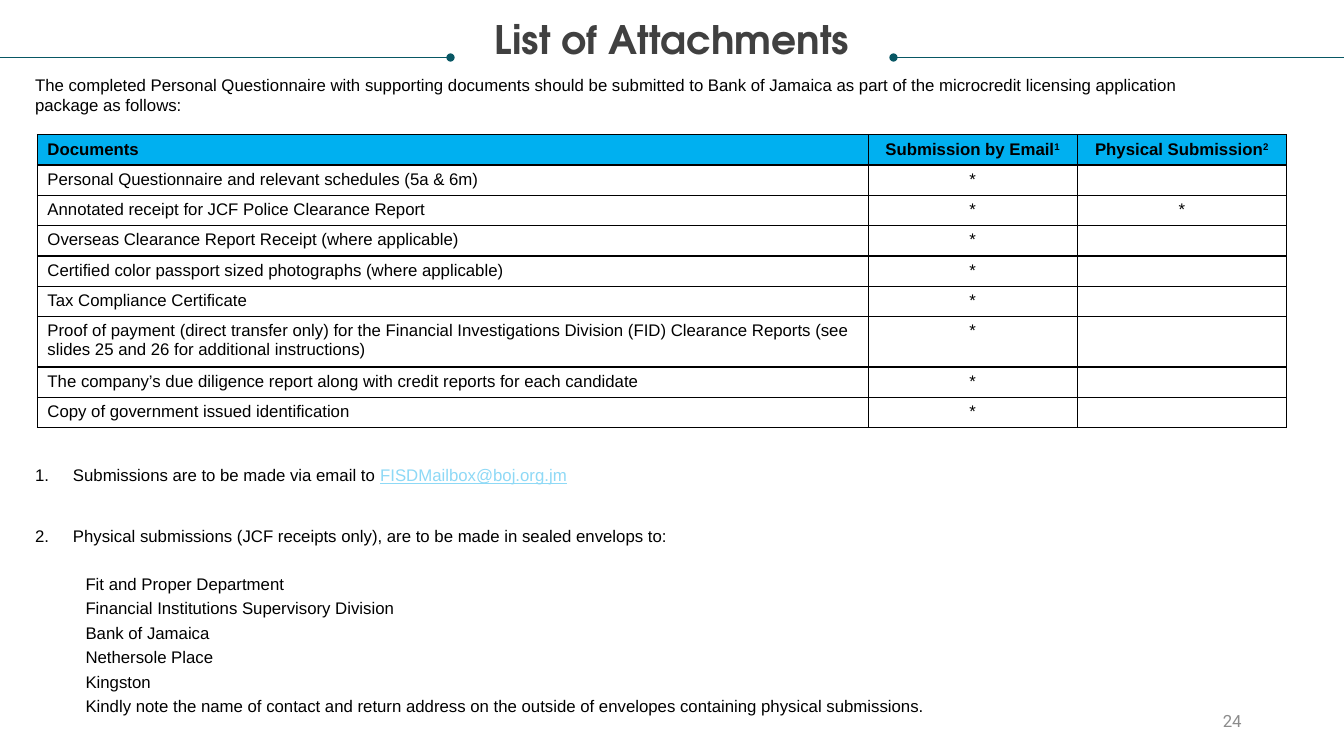
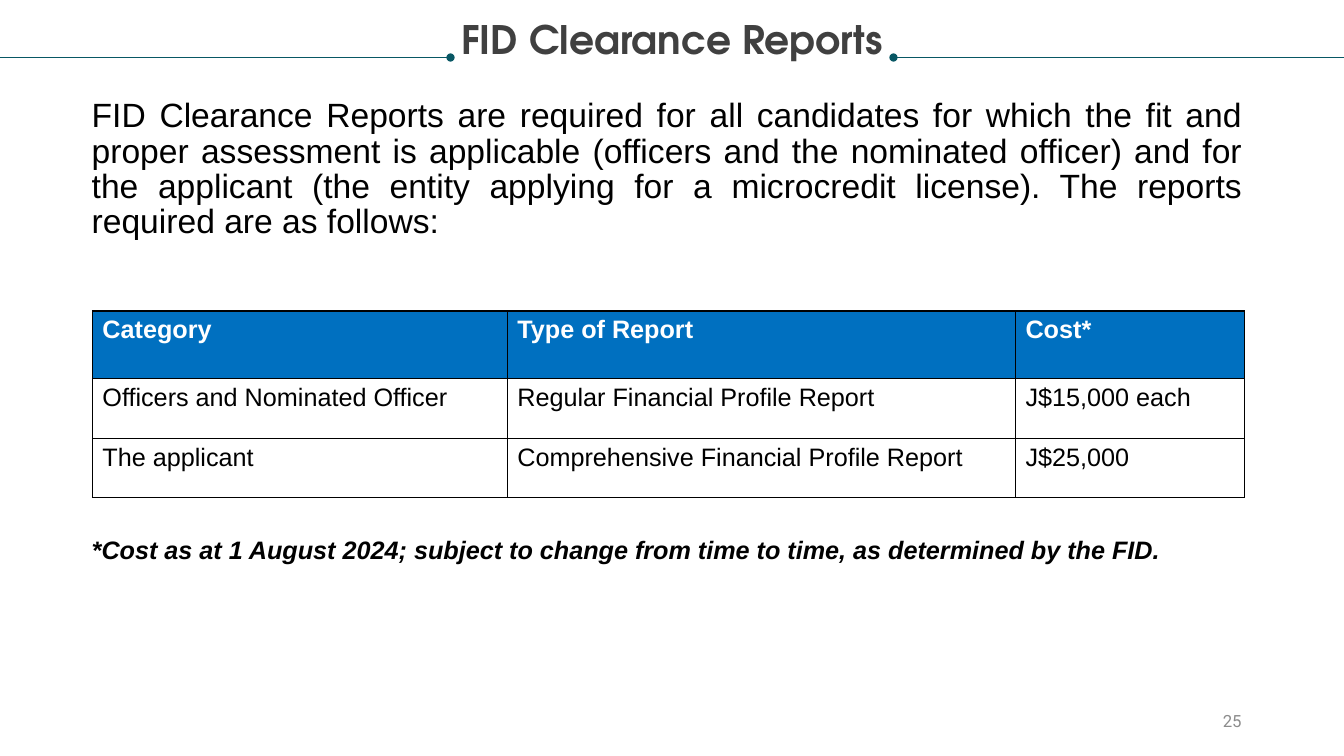
from lxml.etree import SubElement
from pptx import Presentation
from pptx.dml.color import RGBColor
from pptx.enum.shapes import MSO_CONNECTOR
from pptx.enum.text import MSO_ANCHOR, PP_ALIGN
from pptx.oxml.ns import qn
from pptx.util import Pt

COLORS = {
    "rule": "085764", "title": "404040", "number": "8C8C8C", "text": "000000",
    "white": "FFFFFF", "link": "8ED9F6", "sky": "00B0F0", "blue": "0070C0",
}
PAGE_WIDTH, PAGE_HEIGHT = 960, 540
RULE_TOP, RULE_LENGTH = 41.1, 321.8
LEFT, CENTER, RIGHT, JUSTIFY = PP_ALIGN.LEFT, PP_ALIGN.CENTER, PP_ALIGN.RIGHT, PP_ALIGN.JUSTIFY


def color(name):
    return RGBColor.from_string(COLORS[name])


class Slides:
    def __init__(self):
        self.deck = Presentation()
        self.deck.slide_width, self.deck.slide_height = Pt(PAGE_WIDTH), Pt(PAGE_HEIGHT)
        self.page = None

    def style(self, para, size, ink="text", font="Arial", bold=False, italic=False, align=LEFT):
        para.alignment = align
        for span in para.runs:
            span.font.name, span.font.size = font, Pt(size)
            span.font.bold, span.font.italic = bold, italic
            span.font.color.rgb = color(ink)
        if not para.runs:
            # An empty cell takes its height from the end-of-paragraph size.
            SubElement(para._p, qn("a:endParaRPr"), sz=str(size * 100))

    def add_page(self, title, number):
        self.page = self.deck.slides.add_slide(self.deck.slide_layouts[5])
        self.rule(0, RULE_LENGTH, "tailEnd")
        self.rule(PAGE_WIDTH - RULE_LENGTH, PAGE_WIDTH, "headEnd")
        self.title(title)
        box = self.text(678, 500.4, 216, 28.8, str(number), 12,
                        ink="number", font="Roboto", align=RIGHT)
        box.text_frame.vertical_anchor = MSO_ANCHOR.MIDDLE

    def title(self, text):
        box = self.page.shapes.title
        box.left, box.top, box.width, box.height = Pt(18), Pt(15), Pt(924), Pt(30)
        frame = box.text_frame
        frame.margin_left = frame.margin_right = frame.margin_top = frame.margin_bottom = 0
        frame.vertical_anchor = MSO_ANCHOR.TOP
        frame.text = text
        para = frame.paragraphs[0]
        para.line_spacing = 0.9
        self.style(para, 28, "title", "TeX Gyre Adventor", bold=True, align=CENTER)

    def rule(self, start, end, dot_end):
        line = self.page.shapes.add_connector(
            MSO_CONNECTOR.STRAIGHT, Pt(start), Pt(RULE_TOP), Pt(end), Pt(RULE_TOP))
        line.line.color.rgb, line.line.width = color("rule"), Pt(0.5)
        properties = line._element.spPr
        SubElement(properties.find(qn("a:ln")), qn(f"a:{dot_end}"), type="oval")
        SubElement(properties, qn("a:effectLst"))

    def text(self, left, top, width, height, text, size, **style):
        box = self.page.shapes.add_textbox(Pt(left), Pt(top), Pt(width), Pt(height))
        box.text_frame.word_wrap = True
        box.text_frame.text = text
        for para in box.text_frame.paragraphs:
            self.style(para, size, **style)
        return box

    def indent(self, para, margin, number=None):
        properties = para._p.get_or_add_pPr()
        properties.set("marL", str(Pt(margin)))
        if number:
            properties.set("indent", str(-Pt(margin)))
            SubElement(properties, qn("a:buFont"), typeface="+mj-lt")
            SubElement(properties, qn("a:buAutoNum"), type="arabicPeriod", startAt=str(number))

    def add_span(self, para, text, size, ink="text", bold=False):
        span = para.add_run()
        span.text = text
        span.font.name, span.font.size, span.font.bold = "Arial", Pt(size), bold
        span.font.color.rgb = color(ink)
        return span

    def border(self, cell, ink, bottom_width):
        properties = cell._tc.get_or_add_tcPr()
        for side, width in (("lnL", 1), ("lnR", 1), ("lnT", 1), ("lnB", bottom_width)):
            line = SubElement(properties, qn(f"a:{side}"), w=str(Pt(width)))
            fill = SubElement(line, qn("a:solidFill"))
            SubElement(fill, qn("a:srgbClr"), val=COLORS[ink])

    def grid(self, left, top, widths, heights, ink="text", bottom_width=1):
        """Add an empty table with bordered, unfilled cells."""
        table = self.page.shapes.add_table(
            len(heights), len(widths), Pt(left), Pt(top), Pt(sum(widths)), Pt(sum(heights))).table
        table.horz_banding = table.first_row = False
        for column, width in zip(table.columns, widths):
            column.width = Pt(width)
        for row, height in zip(table.rows, heights):
            row.height = Pt(height)
        for cell in table.iter_cells():
            self.border(cell, ink, bottom_width)
            cell.fill.background()
        return table

    def table(self, left, top, widths, heights, rows, size, header_fill, header_ink, aligns):
        table = self.grid(left, top, widths, heights)
        table.first_row = True
        for index, (row, values) in enumerate(zip(table.rows, rows)):
            for cell, value, align in zip(row.cells, values, aligns):
                cell.text = value
                self.style(cell.text_frame.paragraphs[0], size, "text" if index else header_ink,
                           bold=index == 0, align=align)
        for cell in table.rows[0].cells:
            cell.fill.solid()
            cell.fill.fore_color.rgb = color(header_fill)
        return table


def add_attachments(slides):
    slides.add_page("List of Attachments", 24)
    documents = [
        "Personal Questionnaire and relevant schedules (5a & 6m)",
        "Annotated receipt for JCF Police Clearance Report",
        "Overseas Clearance Report Receipt (where applicable)",
        "Certified color passport sized photographs (where applicable)",
        "Tax Compliance Certificate",
        "Proof of payment (direct transfer only) for the Financial Investigations Division (FID) "
        "Clearance Reports (see slides 25 and 26 for additional instructions)",
        "The company’s due diligence report along with credit reports for each candidate",
        "Copy of government issued identification",
    ]
    rows = [("Documents", "Submission by Email", "Physical Submission")]
    rows += [(name, "*", "*" if "JCF" in name else "") for name in documents]
    heights = [36 if name.startswith("Proof") else 21.6 for name, _, _ in rows]
    table = slides.table(26.7, 96.3, (593.4, 149.4, 149.4), heights, rows, 12,
                         "sky", "text", (LEFT, CENTER, CENTER))
    for column, cell in enumerate(table.rows[0].cells):
        cell.vertical_anchor = MSO_ANCHOR.MIDDLE
        if column:
            mark = slides.add_span(cell.text_frame.paragraphs[0], str(column), 12, bold=True)
            mark._r.get_or_add_rPr().set("baseline", "30000")

    slides.text(18, 49.7, 850, 36,
                "The completed Personal Questionnaire with supporting documents should be submitted "
                "to Bank of Jamaica as part of the microcredit licensing application package as "
                "follows:", 12)

    instructions = [
        "Submissions are to be made via email to ",
        "Physical submissions (JCF receipts only), are to be made in sealed envelops to:",
        "Fit and Proper Department",
        "Financial Institutions Supervisory Division",
        "Bank of Jamaica",
        "Nethersole Place",
        "Kingston",
        "Kindly note the name of contact and return address on the outside of envelopes "
        "containing physical submissions.",
    ]
    box = slides.text(18, 328.3, 838, 200, "\n".join(instructions), 12)
    paras = box.text_frame.paragraphs
    for number, para in enumerate(paras[:2], 1):
        slides.indent(para, 27, number)
    for para in paras[2:]:
        slides.indent(para, 36)
        para.line_spacing, para.space_before = 1.2, Pt(0.2)
    paras[1].space_before, paras[2].space_before = Pt(29.1), Pt(17)
    slides.add_span(paras[0], "FISDMailbox@boj.org.jm", 12, "link").font.underline = True


def add_clearance_reports(slides):
    slides.add_page("FID Clearance Reports", 25)
    panel = slides.grid(58.3, 67.7, [836], [355.7], ink="white", bottom_width=3).cell(0, 0)
    panel.text = (
        "FID Clearance Reports are required for all candidates for which the fit and proper "
        "assessment is applicable (officers and the nominated officer) and for the applicant "
        "(the entity applying for a microcredit license). The reports required are as follows:\n"
        "*Cost as at 1 August 2024; subject to change from time to time, as determined by the FID.")
    intro, footnote = panel.text_frame.paragraphs
    slides.style(intro, 24, align=JUSTIFY)
    slides.style(footnote, 18, bold=True, italic=True, align=JUSTIFY)
    intro.line_spacing, footnote.space_before = 0.94, Pt(211.6)

    rows = [
        ("Category", "Type of Report", "Cost*"),
        ("Officers and Nominated Officer", "Regular Financial Profile Report", "J$15,000 each"),
        ("The applicant", "Comprehensive Financial Profile Report", "J$25,000"),
    ]
    slides.table(66, 222.1, (296.4, 363, 163.6), (48.4, 42.5, 42.5), rows, 18,
                 "blue", "white", (LEFT, LEFT, LEFT))


def main():
    slides = Slides()
    add_attachments(slides)
    add_clearance_reports(slides)
    slides.deck.save("out.pptx")


if __name__ == "__main__":
    main()
